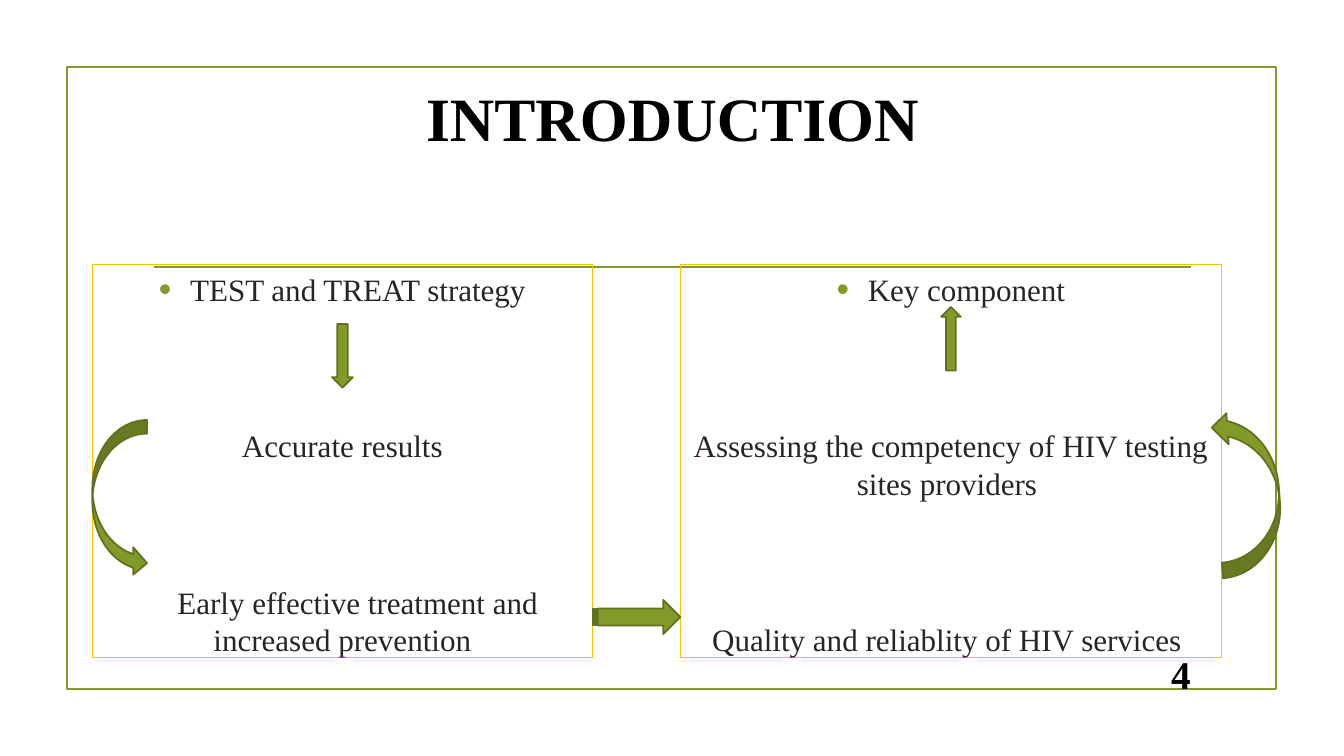
from lxml import etree
from pptx import Presentation
from pptx.dml.color import RGBColor
from pptx.enum.shapes import MSO_CONNECTOR, MSO_SHAPE as SHAPE
from pptx.enum.text import MSO_ANCHOR as ANCHOR, PP_ALIGN as ALIGN
from pptx.oxml.ns import qn
from pptx.util import Pt

FONT = "Times New Roman"
GREEN, DARK_GREEN, GOLD = "83992A", "61711F", "FFC000"
BLACK, TEXT = "000000", "262626"
LINE_HEIGHT, STEP_GAP, HANGING = 26.5, 85, 22.3


def color(hex_string):
    return RGBColor.from_string(hex_string)


def add_shape(slide, kind, box, line, width=1.25, fill=None, rotation=0):
    shape = slide.shapes.add_shape(kind, *map(Pt, box))
    shape.shadow.inherit = False
    shape.rotation = rotation
    shape.line.color.rgb = color(line)
    shape.line.width = Pt(width)
    if fill:
        shape.fill.solid()
        shape.fill.fore_color.rgb = color(fill)
    else:
        shape.fill.background()
    return shape


def add_arrow(slide, kind, box, rotation=0):
    return add_shape(slide, kind, box, DARK_GREEN, fill=GREEN, rotation=rotation)


def set_indent(paragraph, left, first):
    properties = paragraph._p.get_or_add_pPr()
    properties.set("marL", str(Pt(left)))
    properties.set("indent", str(Pt(first)))
    return properties


def add_bullet(paragraph):
    properties = set_indent(paragraph, HANGING, -HANGING)
    bullet_color = etree.SubElement(properties, qn("a:buClr"))
    etree.SubElement(bullet_color, qn("a:srgbClr"), val=GREEN)
    etree.SubElement(properties, qn("a:buSzPct"), val="115000")
    etree.SubElement(properties, qn("a:buFont"), typeface="Arial")
    etree.SubElement(properties, qn("a:buChar"), char="•")


def write(paragraph, text, size=22.2, hex_color=TEXT, bold=False, align=ALIGN.CENTER):
    paragraph.alignment = align
    run = paragraph.add_run()
    run.text = text
    run.font.name = FONT
    run.font.size = Pt(size)
    run.font.bold = bold
    run.font.color.rgb = color(hex_color)


def add_label(slide, box, text, **text_format):
    frame = slide.shapes.add_textbox(*map(Pt, box)).text_frame
    frame.word_wrap = True
    frame.vertical_anchor = ANCHOR.MIDDLE
    write(frame.paragraphs[0], text, hex_color=BLACK, bold=True, **text_format)


def add_background(slide, box):
    """Green frame with the rule under the title area."""
    left, top, width, height = box
    add_shape(slide, SHAPE.RECTANGLE, box, GREEN)
    rule = slide.shapes.add_connector(
        MSO_CONNECTOR.STRAIGHT, Pt(left + 62.5), Pt(top + 142.5),
        Pt(left + width - 61), Pt(top + 142.5))
    rule.line.color.rgb = color(GREEN)
    rule.line.width = Pt(1.25)
    etree.SubElement(rule._element.spPr, qn("a:effectLst"))


def add_steps(slide, box, steps, last_indent=0):
    """Outlined column: a bulleted heading and evenly spaced steps."""
    frame = add_shape(slide, SHAPE.RECTANGLE, box, GOLD, width=0.75).text_frame
    frame.word_wrap = True
    frame.vertical_anchor = ANCHOR.TOP
    frame.margin_top = Pt(4.5)
    for index, step in enumerate(steps):
        paragraph = frame.add_paragraph() if index else frame.paragraphs[0]
        if index == 0:
            add_bullet(paragraph)
        else:
            paragraph.space_before = Pt(STEP_GAP)
        if index == len(steps) - 1:
            set_indent(paragraph, 0, last_indent)
        paragraph.line_spacing = Pt(LINE_HEIGHT)
        write(paragraph, step)


def add_strategy(slide, box):
    left, top, width, height = box
    add_steps(slide, box, [
        "TEST and TREAT strategy",
        "Accurate results",
        "Early effective treatment and increased prevention",
    ], last_indent=22)
    add_arrow(slide, SHAPE.DOWN_ARROW, (left + width / 2 - 7.5, top + 42.5, 15, 45.4))
    add_arrow(slide, SHAPE.CURVED_RIGHT_ARROW, (left, top + 111, 39, 112))


def add_component(slide, box):
    left, top, width, height = box
    add_steps(slide, box, [
        "Key component",
        "Assessing the competency of HIV testing sites providers ",
        "Quality and reliablity of HIV services ",
    ])
    add_arrow(slide, SHAPE.CURVED_RIGHT_ARROW,
              (left + width - 3.5, top + 103.5, 44.6, 119), rotation=175.7)
    add_arrow(slide, SHAPE.UP_ARROW, (left + width / 2 - 7, top + 30.3, 14, 45.4))


def main():
    presentation = Presentation()
    presentation.slide_width, presentation.slide_height = Pt(960), Pt(540)
    slide = presentation.slides.add_slide(presentation.slide_layouts[6])
    add_background(slide, (47.7, 48, 864, 444))
    add_label(slide, (142, 49, 677, 68.4), "INTRODUCTION", size=44)
    add_label(slide, (815, 470, 42.5, 22.3), "4", size=28, align=ALIGN.RIGHT)
    add_strategy(slide, (66, 189, 357.2, 280.6))
    add_component(slide, (486, 189, 386.6, 280.6))
    add_arrow(slide, SHAPE.STRIPED_RIGHT_ARROW, (423.2, 428.5, 62.8, 24.5))
    presentation.save("out.pptx")


if __name__ == "__main__":
    main()
